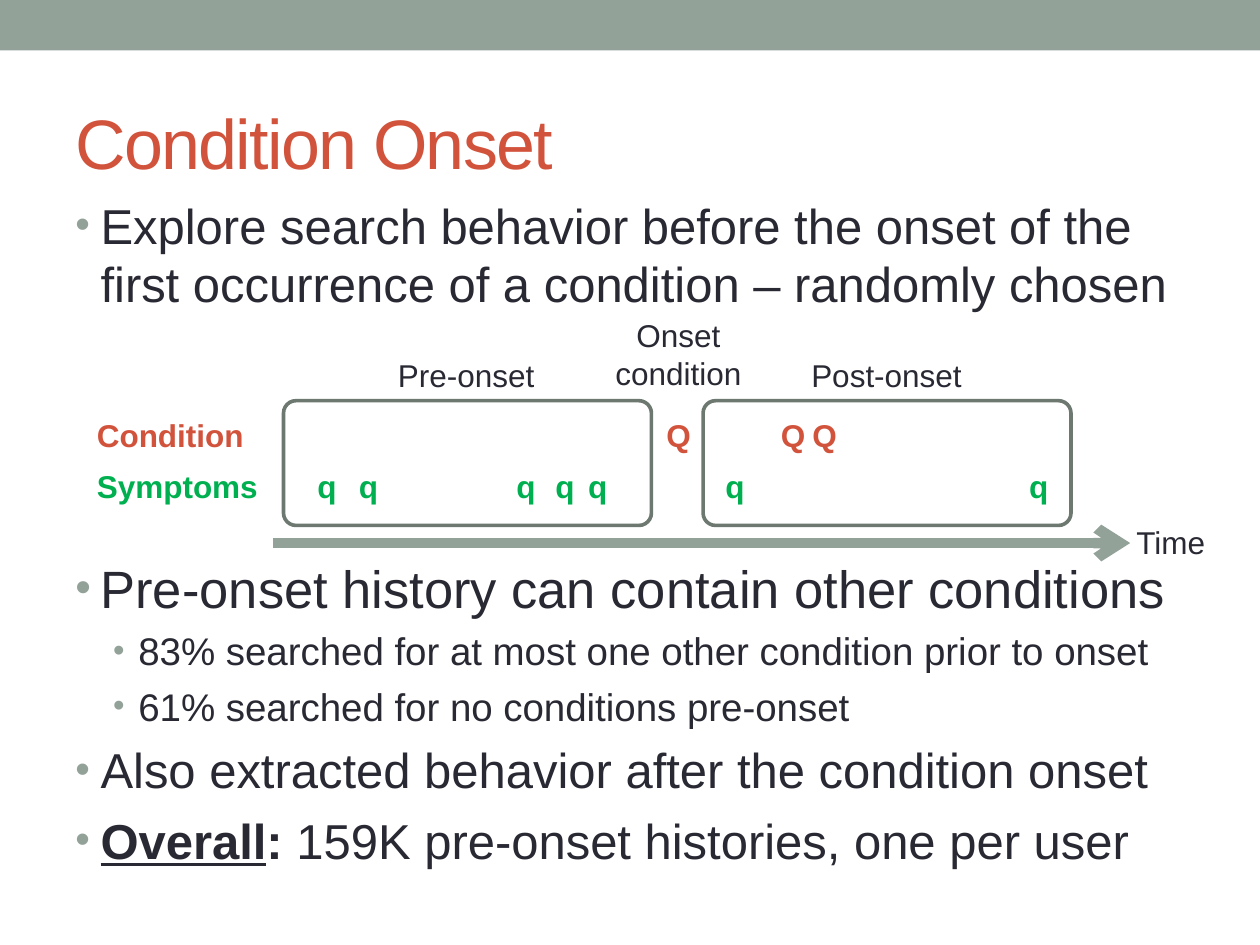
"""Build the Condition Onset slide with its timeline of queries."""
from lxml.etree import SubElement
from pptx import Presentation
from pptx.dml.color import RGBColor
from pptx.enum.shapes import MSO_CONNECTOR, MSO_SHAPE
from pptx.enum.text import MSO_ANCHOR, PP_ALIGN
from pptx.oxml.ns import qn
from pptx.util import Inches, Pt

THEME = dict(font="Arial", ink="292934", red="D2533C", green="00B050",
             sage="93A299", edge="6D7871", title=40, label=18)

TITLE = "Condition Onset"
INTRO = [(0, 28, [("Explore search behavior before the onset of the first "
                   "occurrence of a condition – randomly chosen", "")])]
FACTS = [
    (0, 30, [("Pre-onset history can contain other conditions", "")]),
    (1, 22, [("83% searched for at most one other condition prior to onset", "")]),
    (1, 22, [("61% searched for no conditions pre-onset", "")]),
    (0, 28, [("Also extracted behavior after the condition onset", "")]),
    (0, 28, [("Overall", "bu"), (": ", "b"),
             ("159K pre-onset histories, one per user", "")]),
]
BLOCKS = [(1.5, 1.1, INTRO), (4.36, 2.75, FACTS)]
NOTES = [("Pre-onset", 3.06, 2.78, 1.3), ("Post-onset", 6.34, 2.78, 1.41),
         ("Time", 8.92, 4.1, 0.75)]
ROWS = [
    ("Condition", 1.38, "red", 3.25, "Q", 0.4, [5.19, 6.1, 6.35]),
    ("Symptoms", 1.49, "green", 3.66, "q", 0.36,
     [2.42, 2.75, 4, 4.31, 4.57, 5.66, 8.07]),
]
SPANS = [2.25, 5.58]


def tint(name):
    return RGBColor.from_string(THEME[name])


def write(para, text, size=THEME["label"], color="ink", bold=False, line=False):
    run = para.add_run()
    run.text = text
    font = run.font
    font.name, font.size, font.bold = THEME["font"], Pt(size), bold
    font.underline = line
    font.color.rgb = tint(color)
    return run


def frame(slide, x, y, w, h, wrap=False):
    text = slide.shapes.add_textbox(Inches(x), Inches(y), Inches(w), Inches(h)).text_frame
    text.word_wrap = wrap
    return text


def label(slide, text, x, y, w, **style):
    write(frame(slide, x, y, w, 0.4).paragraphs[0], text, **style)


def bullet(para, level):
    props = para._p.get_or_add_pPr()
    props.set("marL", str(Inches(0.2 + 0.3 * level)))
    props.set("indent", str(Inches(-0.2)))
    color = SubElement(props, qn("a:buClr"))
    SubElement(color, qn("a:srgbClr"), val=THEME["sage"])
    SubElement(props, qn("a:buSzPct"), val="85000")
    SubElement(props, qn("a:buFont"), typeface=THEME["font"])
    SubElement(props, qn("a:buChar"), char="•")


def block(slide, top, high, items):
    text = frame(slide, 0.5, top, 9, high, wrap=True)
    for i, (level, size, runs) in enumerate(items):
        para = text.add_paragraph() if i else text.paragraphs[0]
        para.level = level
        para.space_before = Pt(round(size * 0.23, 1))
        bullet(para, level)
        for words, style in runs:
            write(para, words, size=size, bold="b" in style, line="u" in style)


def shape(slide, kind, x, y, w, h):
    item = slide.shapes.add_shape(kind, Inches(x), Inches(y), Inches(w), Inches(h))
    item.shadow.inherit = False
    return item


def heading(slide):
    title = slide.shapes.title
    title.left, title.top = Inches(0.5), Inches(0.58)
    title.width, title.height = Inches(9), Inches(1.08)
    title.text_frame.vertical_anchor = MSO_ANCHOR.MIDDLE
    para = title.text_frame.paragraphs[0]
    para.alignment = PP_ALIGN.LEFT
    run = write(para, TITLE, size=THEME["title"], color="red")
    run.font._element.set("spc", "-100")


def arrow(slide):
    line = slide.shapes.add_connector(
        MSO_CONNECTOR.STRAIGHT, Inches(2.17), Inches(4.31), Inches(8.97), Inches(4.31))
    line.line.color.rgb = tint("sage")
    line.line.width = Pt(6)
    SubElement(line.line._get_or_add_ln(), qn("a:tailEnd"), type="arrow")
    SubElement(line._element.spPr, qn("a:effectLst"))


def chart(slide):
    arrow(slide)
    for x in SPANS:
        box = shape(slide, MSO_SHAPE.ROUNDED_RECTANGLE, x, 3.18, 2.92, 0.99)
        box.adjustments[0] = 0.1
        box.fill.background()
        box.line.color.rgb = tint("edge")
        box.line.width = Pt(2.08)
    for text, x, y, w in NOTES:
        label(slide, text, x, y, w)
    for name, wide, color, y, mark, w, places in ROWS:
        label(slide, name, 0.67, y, wide, color=color, bold=True)
        for x in places:
            label(slide, mark, x, y, w, color=color, bold=True)
    onset = frame(slide, 4.78, 2.46, 1.21, 0.71)
    for para, word in zip((onset.paragraphs[0], onset.add_paragraph()),
                          ("Onset", "condition")):
        para.alignment = PP_ALIGN.CENTER
        write(para, word)


def main():
    deck = Presentation()
    deck.slide_width, deck.slide_height = Inches(10), Inches(7.5)
    slide = deck.slides.add_slide(deck.slide_layouts[5])
    band = shape(slide, MSO_SHAPE.RECTANGLE, 0, 0, 10, 0.4)
    band.fill.solid()
    band.fill.fore_color.rgb = tint("sage")
    band.line.fill.background()
    heading(slide)
    for top, high, items in BLOCKS:
        block(slide, top, high, items)
    chart(slide)
    deck.save("out.pptx")


if __name__ == "__main__":
    main()
